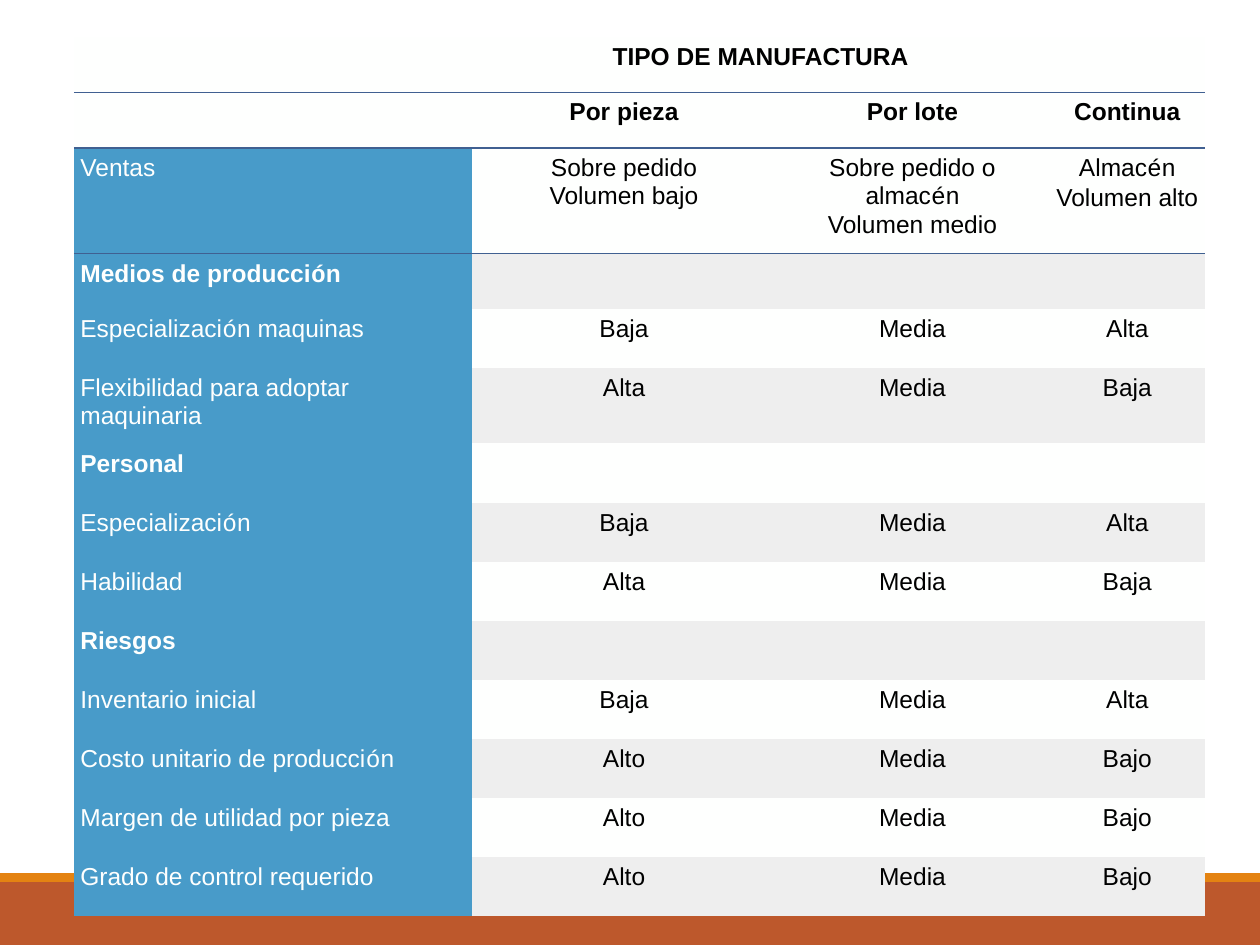
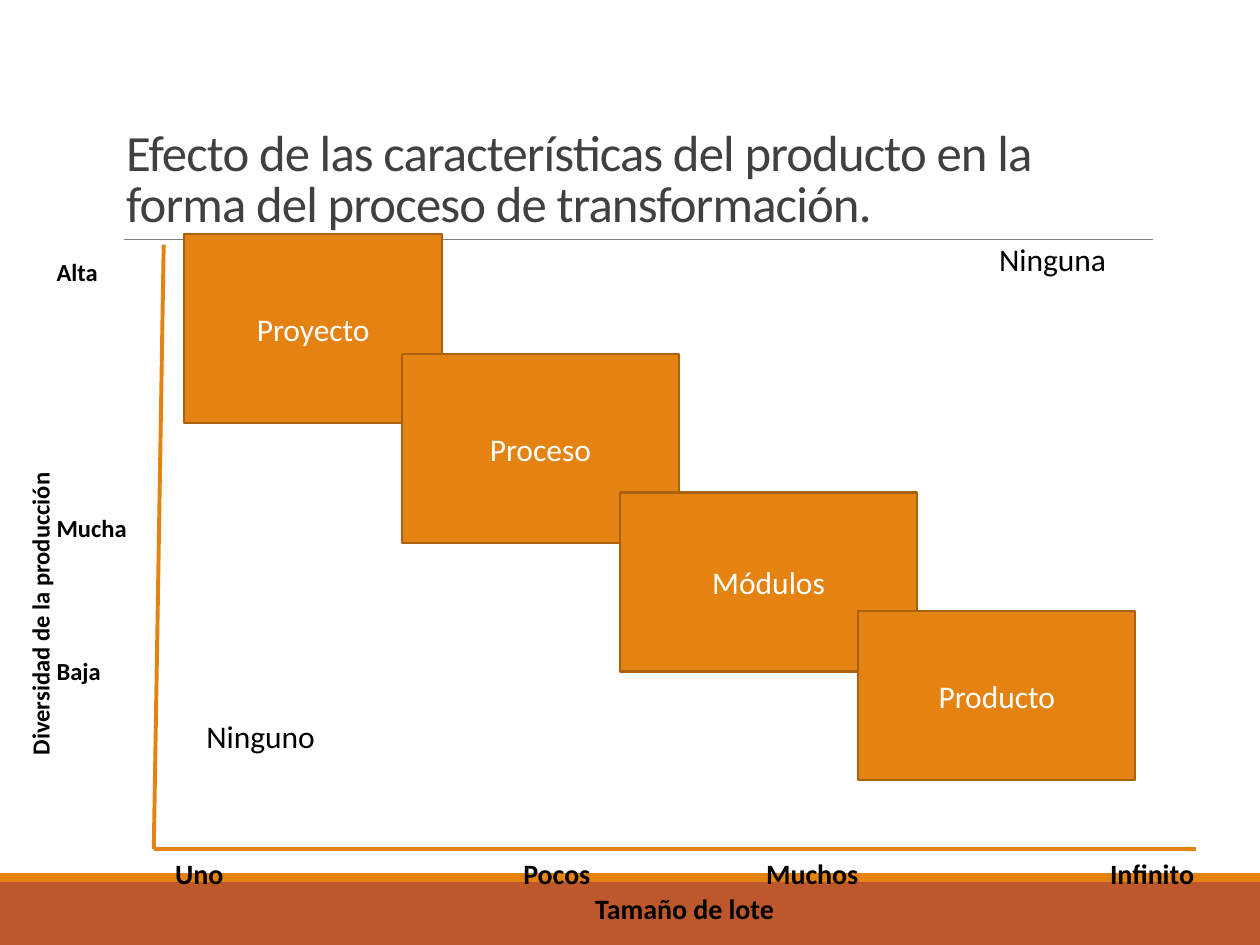
from collections import namedtuple
from itertools import groupby

from lxml import etree
from pptx import Presentation
from pptx import util as u
from pptx.dml.color import RGBColor
from pptx.enum import shapes, text
from pptx.oxml import ns

Box = namedtuple("Box", "left top width height")

COLOURS = {
    "rust": "BD582C", "orange": "E48312", "brown": "A9610D", "grey": "808080",
    "title": "404040", "black": "000000", "white": "FFFFFF", "paper": "FEFFFE",
    "stripe": "EEEEEE", "blue": "489BC9", "rule": "406091",
}
PLAIN_TABLE = "{2D5ABB26-0587-4C30-8999-92F81FD0307C}"
LEFT, CENTER, RIGHT = text.PP_ALIGN.LEFT, text.PP_ALIGN.CENTER, text.PP_ALIGN.RIGHT
TOP, MIDDLE, BOTTOM = text.MSO_ANCHOR.TOP, text.MSO_ANCHOR.MIDDLE, text.MSO_ANCHOR.BOTTOM

SECTIONS = ("Medios de producción", "Personal", "Riesgos")
COMPARISON = [
    ("", "TIPO DE MANUFACTURA", "", ""),
    ("", "Por pieza", "Por lote", "Continua"),
    ("Ventas", "Sobre pedido\nVolumen bajo",
     "Sobre pedido o almacén\nVolumen medio", "Almacén\nVolumen alto"),
    ("Medios de producción", "", "", ""),
    ("Especialización maquinas", "Baja", "Media", "Alta"),
    ("Flexibilidad para adoptar maquinaria", "Alta", "Media", "Baja"),
    ("Personal", "", "", ""),
    ("Especialización", "Baja", "Media", "Alta"),
    ("Habilidad", "Alta", "Media", "Baja"),
    ("Riesgos", "", "", ""),
    ("Inventario inicial", "Baja", "Media", "Alta"),
    ("Costo unitario de producción", "Alto", "Media", "Bajo"),
    ("Margen de utilidad por pieza", "Alto", "Media", "Bajo"),
    ("Grado de control requerido", "Alto", "Media", "Bajo"),
]
COMPARISON_WIDTHS = (8.03, 6.12, 5.51, 3.15)
COMPARISON_HEIGHTS = [1.12, 1.12, 2.13, 1.12, 1.19, 1.52] + [1.19] * 8

STEPS = [
    ("Proyecto", Box(0.61, 0, 5.21, 3.81)),
    ("Proceso", Box(5, 2.42, 5.59, 3.81)),
    ("Módulos", Box(9.4, 5.21, 5.99, 3.61)),
    ("Producto", Box(14.2, 7.6, 5.59, 3.4)),
]
NOTES = [("Ninguno", Box(0.81, 9.61, 5.41, 1.02)), ("Ninguna", Box(16.79, 0, 3.4, 1.02))]


def colour(name):
    """Return the named colour."""
    return RGBColor.from_string(COLOURS[name])


def lengths(box):
    """Return the four sides of a box as lengths."""
    return [u.Cm(side) for side in box]


def inside(box, part):
    """Return a part, given relative to a box, in page coordinates."""
    return part._replace(left=box.left + part.left, top=box.top + part.top)


def add_span(para, words, size, ink, font="Calibri", bold=False):
    """Add one formatted run to a paragraph."""
    span = para.add_run()
    span.text = words
    span.font.size, span.font.name, span.font.bold = u.Pt(size), font, bold
    span.font.color.rgb = colour(ink)
    return span


def add_rectangle(page, box, fill, line=None):
    """Draw a flat rectangle with an optional outline."""
    shape = page.shapes.add_shape(shapes.MSO_SHAPE.RECTANGLE, *lengths(box))
    shape.shadow.inherit = False
    shape.fill.solid()
    shape.fill.fore_color.rgb = colour(fill)
    if line:
        shape.line.color.rgb = colour(line)
        shape.line.width = u.Pt(1.25)
    else:
        shape.line.fill.background()
    return shape


def add_line(page, start, end, ink, weight):
    """Draw a straight line without shadow."""
    points = [u.Cm(value) for value in (*start, *end)]
    line = page.shapes.add_connector(shapes.MSO_CONNECTOR.STRAIGHT, *points)
    line.line.color.rgb = colour(ink)
    line.line.width = u.Pt(weight)
    etree.SubElement(line._element.spPr, ns.qn("a:effectLst"))


def add_plain_table(page, box, widths, heights, insets):
    """Add an unstyled table with the given tracks and cell insets."""
    table = page.shapes.add_table(len(heights), len(widths), *lengths(box)).table
    table.first_row = table.horz_banding = False
    table._tbl.tblPr.find(ns.qn("a:tableStyleId")).text = PLAIN_TABLE
    for column, width in zip(table.columns, widths):
        column.width = u.Cm(width)
    for row, height in zip(table.rows, heights):
        row.height = u.Cm(height)
    for cell in table.iter_cells():
        cell.margin_left, cell.margin_top, cell.margin_right, cell.margin_bottom = map(u.Cm, insets)
        cell.fill.background()
    return table


def add_borders(cell, sides):
    """Rule the given sides of a cell ahead of its fill."""
    for index, side in enumerate(sides):
        line = etree.Element(ns.qn(f"a:ln{side}"), w=str(u.Pt(1)))
        fill = etree.SubElement(line, ns.qn("a:solidFill"))
        etree.SubElement(fill, ns.qn("a:srgbClr"), val=COLOURS["rule"])
        cell._tc.get_or_add_tcPr().insert(index, line)


def draw_backdrop(page, box):
    """Draw the title rule and the two bands at the foot of the page."""
    foot = box.top + box.height
    add_rectangle(page, Box(box.left, foot - 1.27, box.width, 1.27), "rust")
    add_rectangle(page, Box(box.left, foot - 1.45, box.width, 0.18), "orange")
    rule = box.top + 4.83
    add_line(page, (box.left + 2.49, rule), (box.left + 23.24, rule), "grey", 0.5)


def draw_comparison(page, box):
    """Fill the table that compares the types of manufacture."""
    table = add_plain_table(page, box, COMPARISON_WIDTHS, COMPARISON_HEIGHTS, [0.13] * 4)
    table.cell(0, 1).merge(table.cell(0, 2))
    borders = {0: "B", 1: "TB", 2: "T"}
    for row, entries in enumerate(COMPARISON):
        for column, words in enumerate(entries):
            cell = table.cell(row, column)
            add_borders(cell, borders.get(row, ""))
            label = column == 0 and row > 1
            stripe = "stripe" if row > 2 and row % 2 else "paper"
            cell.fill.solid()
            cell.fill.fore_color.rgb = colour("blue" if label else stripe)
            if words:
                bold = row < 2 or words in SECTIONS
                write_entry(cell, words, "paper" if label else "black", bold,
                            LEFT if label else CENTER)


def write_entry(cell, words, ink, bold, align):
    """Write the lines of a cell, with accented letters in their own font."""
    for index, line in enumerate(words.split("\n")):
        frame = cell.text_frame
        para = frame.add_paragraph() if index else frame.paragraphs[0]
        para.alignment = align
        for accented, letters in groupby(line, lambda letter: letter in "éó"):
            font = "Courier New" if accented else "Arial"
            add_span(para, "".join(letters), 14, ink, font, bold)


def draw_title(page, box, words):
    """Place and format the title."""
    title = page.shapes.title
    title.left, title.top, title.width, title.height = lengths(box)
    frame = title.text_frame
    frame.word_wrap, frame.auto_size = True, text.MSO_AUTO_SIZE.NONE
    frame.vertical_anchor = BOTTOM
    para = frame.paragraphs[0]
    para.alignment, para.line_spacing = LEFT, 0.85
    span = add_span(para, words, 29, "title")
    span.font._element.set("spc", "-50")


def draw_process_map(page, box):
    """Draw the process steps, the two axes and the corner notes."""
    for words, part in STEPS:
        shape = add_rectangle(page, inside(box, part), "orange", "brown")
        shape.text_frame.vertical_anchor = MIDDLE
        para = shape.text_frame.paragraphs[0]
        para.alignment = CENTER
        add_span(para, words, 18, "white")
    foot = box.top + box.height
    origin = (box.left, foot)
    add_line(page, (box.left + 0.2, box.top + 0.21), origin, "orange", 2.25)
    add_line(page, origin, (box.left + box.width, foot), "orange", 2.25)
    for words, part in NOTES:
        note = page.shapes.add_textbox(*lengths(inside(box, part)))
        note.text_frame.word_wrap = True
        add_span(note.text_frame.paragraphs[0], words, 18, "black")


def write_axis_label(cell, words, size, align=LEFT, anchor=BOTTOM):
    """Write a bold axis label into a cell."""
    cell.vertical_anchor = anchor
    para = cell.text_frame.paragraphs[0]
    para.alignment = align
    add_span(para, words, size, "black", bold=True)


def draw_diversity_axis(page, box):
    """Label the vertical axis, with its name turned upwards."""
    table = add_plain_table(page, box, (0.61, box.width - 0.61),
                            [box.height / 4] * 4, (0.03, 0.03, 0.03, 0))
    name = table.cell(0, 0)
    name.merge(table.cell(3, 0))
    write_axis_label(name, "Diversidad de la producción", 14, CENTER)
    name._tc.get_or_add_tcPr().set("vert", "vert270")
    for row, words in enumerate(("Alta", "Mucha", "Baja")):
        write_axis_label(table.cell(row, 1), words, 14, anchor=BOTTOM if row else TOP)


def draw_batch_axis(page, box):
    """Label the horizontal axis, with its name below."""
    table = add_plain_table(page, box, [box.width / 4] * 4,
                            [box.height / 2] * 2, (0.03, 0.03, 0.03, 0))
    labels = (("Uno", LEFT), ("Pocos", CENTER), ("Muchos", CENTER), ("Infinito", RIGHT))
    for column, (words, align) in enumerate(labels):
        write_axis_label(table.cell(0, column), words, 16, align)
    table.cell(1, 0).merge(table.cell(1, 3))
    write_axis_label(table.cell(1, 0), "Tamaño de lote", 16, CENTER)


def add_page(deck, layout):
    """Add a page with the shared backdrop."""
    page = deck.slides.add_slide(deck.slide_layouts.get_by_name(layout))
    draw_backdrop(page, Box(0, 0, 25.4, 19.05))
    return page


def main():
    """Build and save the deck."""
    deck = Presentation()
    deck.slide_width, deck.slide_height = u.Cm(25.4), u.Cm(19.05)

    page = add_page(deck, "Blank")
    draw_comparison(page, Box(1.49, 0.74, 22.81, 17.78))

    page = add_page(deck, "Title Only")
    draw_title(page, Box(2.29, 0.79, 20.95, 4.04),
               "Efecto de las características del producto en la forma del "
               "proceso de transformación.")
    draw_process_map(page, Box(3.1, 4.72, 21, 12.4))
    draw_diversity_axis(page, Box(0.5, 5.18, 2.46, 11.56))
    draw_batch_axis(page, Box(3.5, 17.27, 20.6, 1.4))

    deck.save("out.pptx")


if __name__ == "__main__":
    main()
